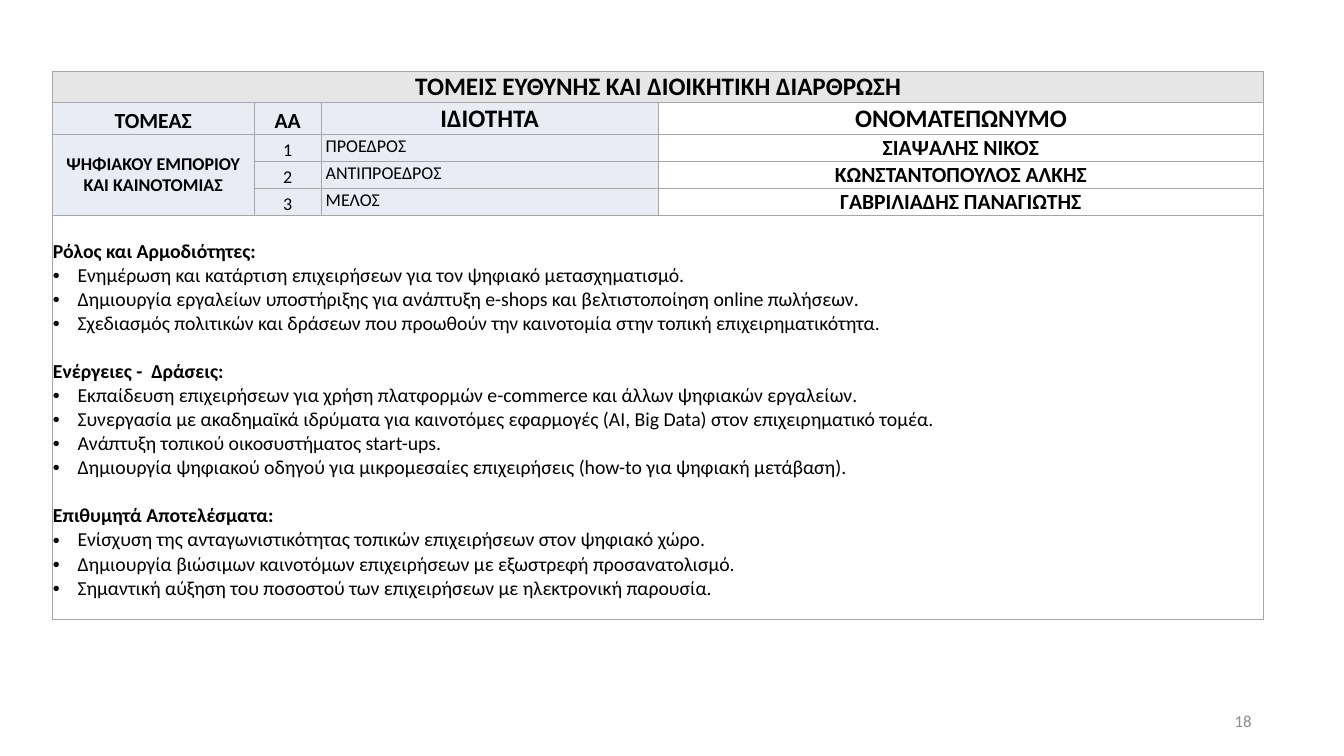
from dataclasses import dataclass
from lxml.etree import SubElement
from pptx import Presentation
from pptx.dml.color import RGBColor
from pptx.enum.text import MSO_ANCHOR, PP_ALIGN
from pptx.oxml.ns import qn
from pptx.util import Inches, Pt

# Content
HEADING = "ΤΟΜΕΙΣ ΕΥΘΥΝΗΣ ΚΑΙ ΔΙΟΙΚΗΤΙΚΉ ΔΙΑΡΘΡΩΣΗ"
COLUMNS = ["ΤΟΜΕΑΣ", "ΑΑ", "ΙΔΙΟΤΗΤΑ", "ΟΝΟΜΑΤΕΠΩΝΥΜΟ"]
SECTOR = "ΨΗΦΙΑΚΟΥ ΕΜΠΟΡΙΟΥ ΚΑΙ ΚΑΙΝΟΤΟΜΙΑΣ"
MEMBERS = [
    ("ΠΡΟΕΔΡΟΣ", "ΣΙΑΨΑΛΗΣ ΝΙΚΟΣ"),
    ("ΑΝΤΙΠΡΟΕΔΡΟΣ", "ΚΩΝΣΤΑΝΤΟΠΟΥΛΟΣ ΑΛΚΗΣ"),
    ("ΜΕΛΟΣ", "ΓΑΒΡΙΛΙΑΔΗΣ ΠΑΝΑΓΙΩΤΗΣ"),
]
SECTIONS = {
    "Ρόλος και Αρμοδιότητες:": [
        "Ενημέρωση και κατάρτιση επιχειρήσεων για τον ψηφιακό μετασχηματισμό.",
        "Δημιουργία εργαλείων υποστήριξης για ανάπτυξη e-shops και βελτιστοποίηση online πωλήσεων.",
        "Σχεδιασμός πολιτικών και δράσεων που προωθούν την καινοτομία στην τοπική επιχειρηματικότητα.",
    ],
    "Ενέργειες -  Δράσεις:": [
        "Εκπαίδευση επιχειρήσεων για χρήση πλατφορμών e-commerce και άλλων ψηφιακών εργαλείων.",
        "Συνεργασία με ακαδημαϊκά ιδρύματα για καινοτόμες εφαρμογές (AI, Big Data) στον επιχειρηματικό τομέα.",
        "Ανάπτυξη τοπικού οικοσυστήματος start-ups.",
        "Δημιουργία ψηφιακού οδηγού για μικρομεσαίες επιχειρήσεις (how-to για ψηφιακή μετάβαση).",
    ],
    "Επιθυμητά Αποτελέσματα:": [
        "Ενίσχυση της ανταγωνιστικότητας τοπικών επιχειρήσεων στον ψηφιακό χώρο.",
        "Δημιουργία βιώσιμων καινοτόμων επιχειρήσεων με εξωστρεφή προσανατολισμό.",
        "Σημαντική αύξηση του ποσοστού των επιχειρήσεων με ηλεκτρονική παρουσία.",
    ],
}
PAGE_NUMBER = "18"
COLUMN_WIDTHS = [3.12, 1.04, 5.21, 9.37]
ROW_HEIGHTS = [0.48, 0.48, 0.41, 0.42, 0.42, 6.25]


@dataclass(frozen=True)
class Theme:
    font: str = "Calibri"
    text: str = "000000"
    muted: str = "8C8C8C"
    border: str = "A6A6A6"
    heading_fill: str = "E7E6E6"
    label_fill: str = "E9EBF5"
    plain_fill: str = "FFFFFF"
    heading: float = 28
    label: float = 24
    detail: float = 20
    body: float = 22
    body_gap: float = 26.8
    number: float = 18.7


THEME = Theme()


def style(paragraph, size, bold=False, color=THEME.text, align=PP_ALIGN.CENTER):
    paragraph.alignment = align
    font = paragraph.font
    font.name, font.size, font.bold = THEME.font, Pt(size), bold
    font.color.rgb = RGBColor.from_string(color)


def add_borders(cell):
    properties = cell._tc.get_or_add_tcPr()
    for index, side in enumerate(("lnL", "lnR", "lnT", "lnB")):
        line = properties.makeelement(qn(f"a:{side}"), {"w": str(Pt(1))})
        fill = SubElement(line, qn("a:solidFill"))
        SubElement(fill, qn("a:srgbClr"), val=THEME.border)
        properties.insert(index, line)


def fill_cell(cell, text, size, bold=True, fill=THEME.label_fill,
              anchor=MSO_ANCHOR.BOTTOM):
    cell.text = text
    cell.vertical_anchor = anchor
    cell.fill.solid()
    cell.fill.fore_color.rgb = RGBColor.from_string(fill)
    style(cell.text_frame.paragraphs[0], size, bold)


def add_bullet(paragraph):
    properties = paragraph._p.get_or_add_pPr()
    properties.set("marL", str(Inches(0.38)))
    properties.set("indent", str(-Inches(0.38)))
    SubElement(properties, qn("a:buFont"), typeface="Arial")
    SubElement(properties, qn("a:buChar"), char="•")


def fill_sections(cell):
    fill_cell(cell, "", THEME.body, fill=THEME.plain_fill, anchor=MSO_ANCHOR.TOP)
    cell.margin_top = Inches(0.38)
    frame = cell.text_frame
    for number, (section, points) in enumerate(SECTIONS.items()):
        title = frame.add_paragraph() if number else frame.paragraphs[0]
        title.text = section
        style(title, THEME.body, True, align=PP_ALIGN.LEFT)
        if number:
            title.space_before = Pt(THEME.body_gap)
        for point in points:
            item = frame.add_paragraph()
            item.text = point
            style(item, THEME.body, align=PP_ALIGN.LEFT)
            add_bullet(item)


def add_sector_table(slide):
    table = slide.shapes.add_table(
        len(ROW_HEIGHTS), len(COLUMN_WIDTHS), Inches(0.81), Inches(1.1),
        Inches(sum(COLUMN_WIDTHS)), Inches(sum(ROW_HEIGHTS))).table
    for column, width in zip(table.columns, COLUMN_WIDTHS):
        column.width = Inches(width)
    for row, height in zip(table.rows, ROW_HEIGHTS):
        row.height = Inches(height)
    for cell in table.iter_cells():
        cell.margin_left = cell.margin_right = cell.margin_top = Inches(0.01)
        cell.margin_bottom = 0
        fill_cell(cell, "", THEME.detail, fill=THEME.plain_fill)
        add_borders(cell)

    last_row, last_column = len(ROW_HEIGHTS) - 1, len(COLUMN_WIDTHS) - 1
    for row in (0, last_row):
        table.cell(row, 0).merge(table.cell(row, last_column))
    table.cell(2, 0).merge(table.cell(last_row - 1, 0))

    # Heading and column labels
    fill_cell(table.cell(0, 0), HEADING, THEME.heading, fill=THEME.heading_fill,
              anchor=MSO_ANCHOR.MIDDLE)
    for column, label in enumerate(COLUMNS):
        fill_cell(table.cell(1, column), label,
                  THEME.label if column < 2 else THEME.heading,
                  fill=THEME.plain_fill if column == last_column else THEME.label_fill)

    # Sector and its members
    fill_cell(table.cell(2, 0), SECTOR, THEME.detail, anchor=MSO_ANCHOR.MIDDLE)
    for number, (role, name) in enumerate(MEMBERS, 1):
        row = number + 1
        fill_cell(table.cell(row, 1), str(number), THEME.detail, bold=False)
        role_cell = table.cell(row, 2)
        fill_cell(role_cell, role, THEME.detail, bold=False, anchor=MSO_ANCHOR.TOP)
        role_cell.margin_left = role_cell.margin_right = Inches(0.07)
        role_cell.margin_top = 0
        role_text = role_cell.text_frame.paragraphs[0]
        role_text.alignment = PP_ALIGN.LEFT
        role_text.line_spacing = 1.07
        fill_cell(table.cell(row, 3), name, THEME.label, fill=THEME.plain_fill)

    fill_sections(table.cell(last_row, 0))


def add_page_number(slide):
    frame = slide.shapes.add_textbox(
        Inches(14.68), Inches(10.84), Inches(4.68), Inches(0.62)).text_frame
    frame.word_wrap = True
    frame.vertical_anchor = MSO_ANCHOR.MIDDLE
    frame.margin_left = frame.margin_right = frame.margin_top = frame.margin_bottom = 0
    frame.text = PAGE_NUMBER
    style(frame.paragraphs[0], THEME.number, color=THEME.muted, align=PP_ALIGN.RIGHT)


def main():
    deck = Presentation()
    deck.slide_width, deck.slide_height = Inches(20.79), Inches(11.69)
    slide = deck.slides.add_slide(deck.slide_layouts[6])
    add_sector_table(slide)
    add_page_number(slide)
    deck.save("out.pptx")


if __name__ == "__main__":
    main()
